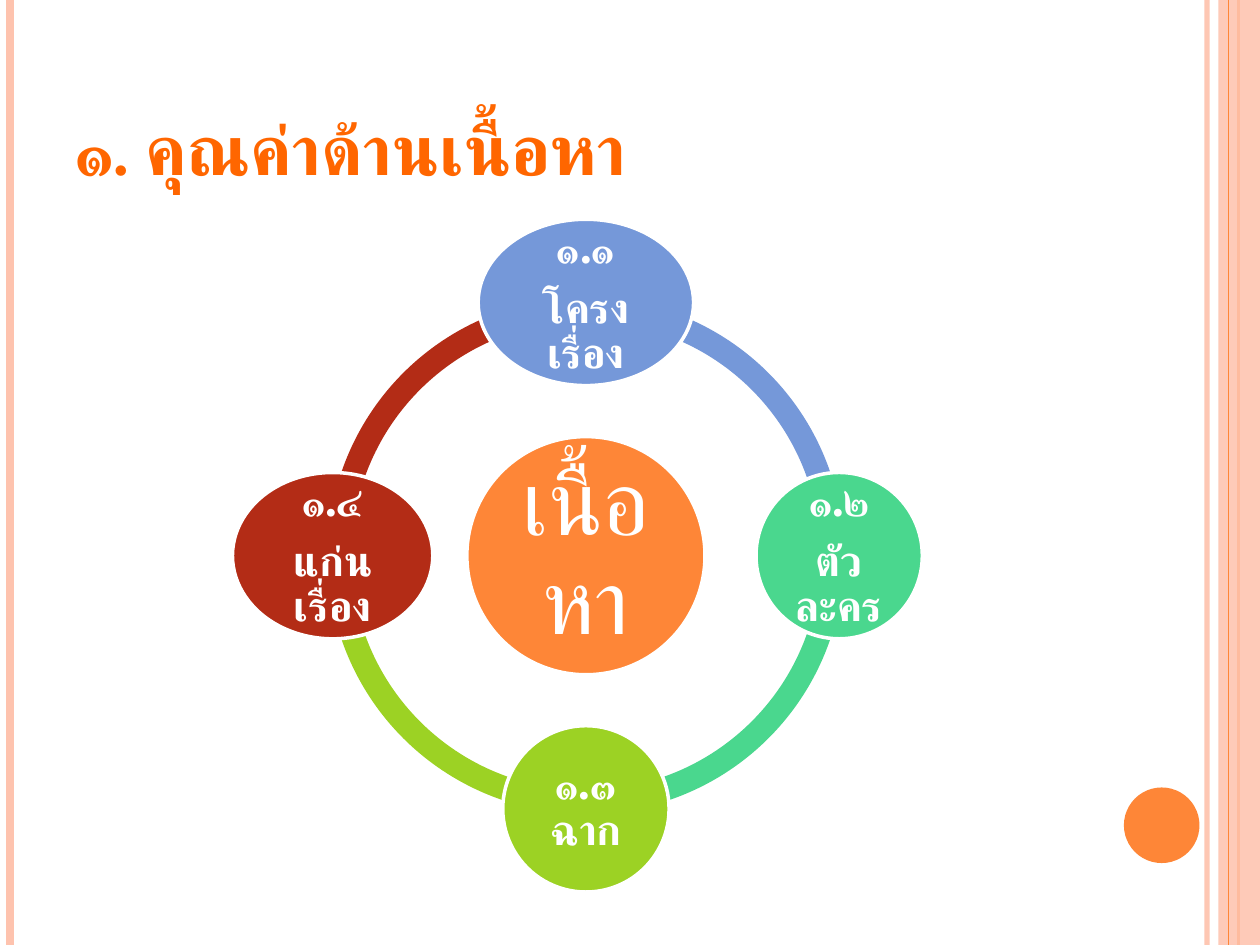
from lxml import etree
from pptx import Presentation
from pptx.dml.color import RGBColor
from pptx.enum import shapes, text
from pptx.oxml.ns import qn
from pptx.util import Inches, Pt

FONT = "TeX Gyre Schola"
WHITE, ORANGE, PEACH = "FFFFFF", "FE8637", "FEC3AE"
BLUE, GREEN, LIME, RED = "7598D9", "4AD78E", "9CD224", "B32C16"
CENTER_X, CENTER_Y = 4.65, 4.41
RING_SIZE, ORBIT = 4.1, 2.01


def color(hex_value):
    return RGBColor.from_string(hex_value)


def set_alpha(fill_parent, percent):
    clr = next(fill_parent.iter(qn("a:srgbClr")))
    etree.SubElement(clr, qn("a:alpha")).set("val", str(percent * 1000))


def add_filled(slide, kind, box, fill, outline=None):
    sp = slide.shapes.add_shape(kind, *map(Inches, box))
    sp.shadow.inherit = False
    sp.fill.solid()
    sp.fill.fore_color.rgb = color(fill)
    if outline:
        sp.line.color.rgb = color(outline)
        sp.line.width = Pt(2)
    else:
        sp.line.fill.background()
    return sp


def add_stripe(slide, x, hex_value, width, alpha=None):
    """Draw a full-height vertical line."""
    line = slide.shapes.add_connector(
        shapes.MSO_CONNECTOR.STRAIGHT, Inches(x), 0, Inches(x), Inches(7.5))
    line.line.color.rgb = color(hex_value)
    line.line.width = Pt(width)
    sp_pr = line._element.spPr
    if alpha:
        set_alpha(sp_pr, alpha)
    etree.SubElement(sp_pr, qn("a:effectLst"))


def format_run(r, size, hex_value, bold):
    r.font.size, r.font.bold, r.font.name = Pt(size), bold, FONT
    r.font.color.rgb = color(hex_value)
    etree.SubElement(r.font._element, qn("a:cs")).set("typeface", FONT)


def add_title(slide, title):
    box = slide.shapes.add_textbox(*map(Inches, (0.5, 0.3, 8.17, 1.25)))
    tf = box.text_frame
    tf.word_wrap = True
    tf.vertical_anchor = text.MSO_ANCHOR.BOTTOM
    tf.text = title
    r = tf.paragraphs[0].runs[0]
    format_run(r, 40, "FF6600", True)
    r.font._element.set("cap", "small")


def add_node(slide, x, y, width, height, fill, label, size=24, bold=True, inset=0.03):
    """Draw a labelled ellipse centred on x, y."""
    box = (x - width / 2, y - height / 2, width, height)
    sp = add_filled(slide, shapes.MSO_SHAPE.OVAL, box, fill, WHITE)
    tf = sp.text_frame
    tf.word_wrap = True
    tf.vertical_anchor = text.MSO_ANCHOR.MIDDLE
    tf.margin_left = tf.margin_right = tf.margin_top = tf.margin_bottom = Inches(inset)
    tf.text = label
    for p in tf.paragraphs:
        p.alignment = text.PP_ALIGN.CENTER
        p.line_spacing = 0.9
        after = etree.SubElement(p._p.get_or_add_pPr(), qn("a:spcAft"))
        etree.SubElement(after, qn("a:spcPct")).set("val", "35000")
        format_run(p.runs[0], size, WHITE, bold)


def add_arc(slide, start, end, fill):
    """Draw a ring segment; angles are in degrees clockwise from the right."""
    box = (CENTER_X - RING_SIZE / 2, CENTER_Y - RING_SIZE / 2, RING_SIZE, RING_SIZE)
    sp = add_filled(slide, shapes.MSO_SHAPE.BLOCK_ARC, box, fill)
    for i, value in enumerate((start * 0.6, end * 0.6, 0.046)):
        sp.adjustments[i] = value


def add_frame(slide):
    add_stripe(slide, 9.58, PEACH, 3, 93)
    add_stripe(slide, 0.08, PEACH, 4.5)
    add_stripe(slide, 9.83, ORANGE, 1.5)
    band = add_filled(slide, shapes.MSO_SHAPE.RECTANGLE, (9.67, 0, 0.33, 7.5), PEACH)
    set_alpha(band._element.spPr, 87)
    add_stripe(slide, 9.75, ORANGE, 0.75)
    add_filled(slide, shapes.MSO_SHAPE.OVAL, (8.92, 6.25, 0.6, 0.6), ORANGE)


def add_cycle(slide):
    for start, fill in ((180, RED), (90, LIME), (0, GREEN), (270, BLUE)):
        add_arc(slide, start, (start + 90) % 360, fill)
    add_node(slide, CENTER_X, CENTER_Y, 1.89, 1.89, ORANGE, "เนื้อหา", 52, False, 0.07)
    nodes = (
        (0, -1, 1.71, BLUE, "๑.๑\nโครงเรื่อง"),
        (1, 0, 1.32, GREEN, "๑.๒\nตัวละคร"),
        (0, 1, 1.32, LIME, "๑.๓ ฉาก"),
        (-1, 0, 1.59, RED, "๑.๔\nแก่นเรื่อง"),
    )
    for dx, dy, width, fill, label in nodes:
        add_node(slide, CENTER_X + dx * ORBIT, CENTER_Y + dy * ORBIT,
                 width, 1.32, fill, label)


def main():
    prs = Presentation()
    prs.slide_width, prs.slide_height = Inches(10), Inches(7.5)
    slide = prs.slides.add_slide(prs.slide_layouts[6])
    add_frame(slide)
    add_title(slide, "๑. คุณค่าด้านเนื้อหา")
    add_cycle(slide)
    prs.save("out.pptx")


if __name__ == "__main__":
    main()
